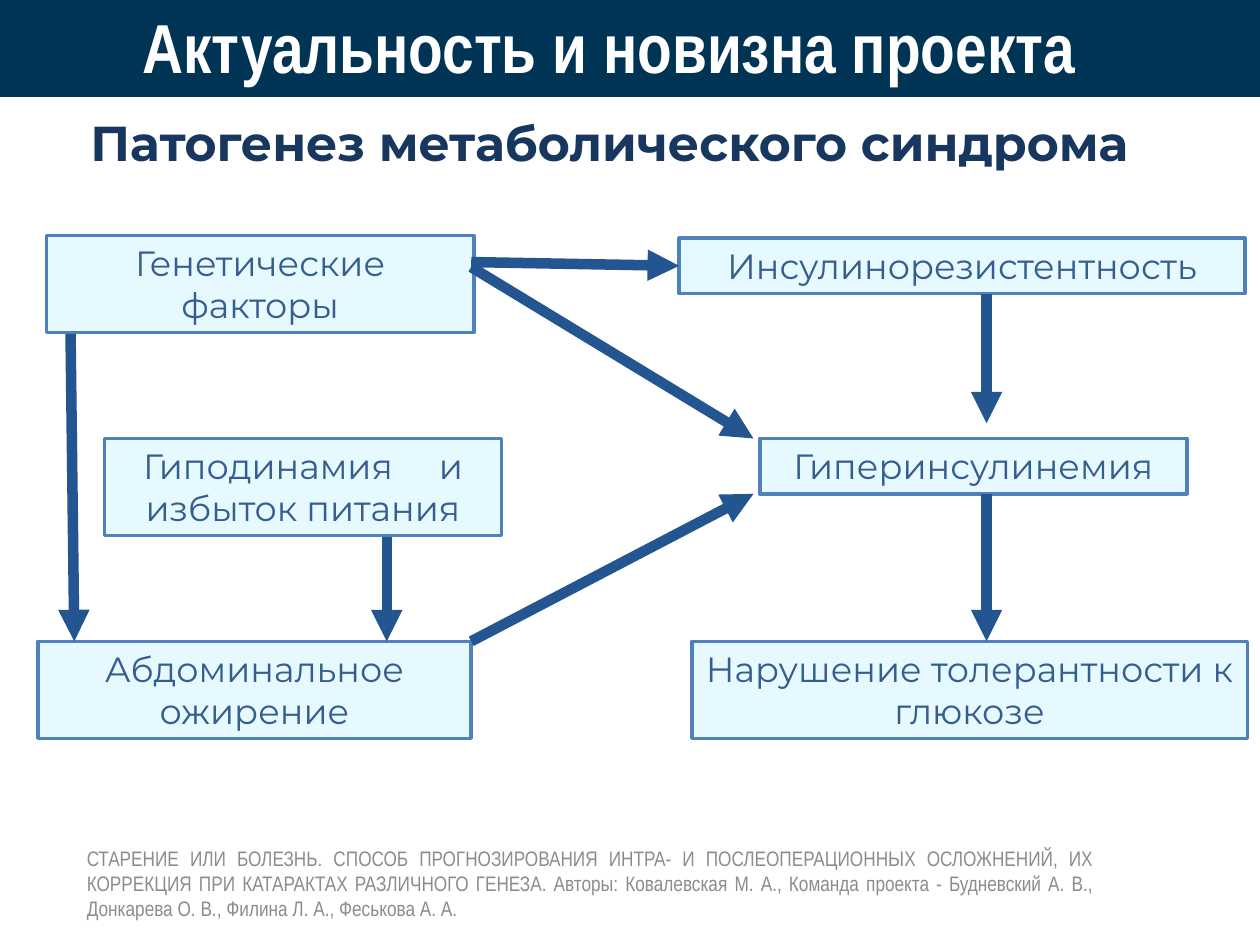
from lxml import etree
from pptx import Presentation
from pptx.dml.color import RGBColor
from pptx.enum.shapes import MSO_CONNECTOR, MSO_SHAPE
from pptx.enum.text import MSO_ANCHOR, MSO_AUTO_SIZE, PP_ALIGN
from pptx.oxml.ns import qn
from pptx.util import Inches, Pt

RECTANGLE = MSO_SHAPE.RECTANGLE
STRAIGHT = MSO_CONNECTOR.STRAIGHT
TOP, MIDDLE = MSO_ANCHOR.TOP, MSO_ANCHOR.MIDDLE
CENTER, JUSTIFY = PP_ALIGN.CENTER, PP_ALIGN.JUSTIFY
LEFT_SIDE = 1

COLORS = {
    "header": "003455", "title": "FFFFFF", "subtitle": "17375E",
    "box": "E6F9FE", "border": "4F81BD", "box_text": "355E8F",
    "arrow": "235591", "footer": "8C8C8C",
}
HEADING_FONT, BODY_FONT = "Arial Narrow", "Montserrat"
ONE_LINE, TWO_LINES = 0.44, 0.77
WIDE_GAP = 2100  # extra space after a character, in hundredths of a point

# name: (left, top, width, height, words)
FACTORS = {
    "genes": (0.37, 1.87, 3.39, TWO_LINES, ["Генетические факторы"]),
    "resistance": (5.39, 1.89, 4.49, ONE_LINE, ["Инсулинорезистентность"]),
    "lifestyle": (0.83, 3.48, 3.15, TWO_LINES,
                  ["Гиподинамия", " ", "и избыток питания"]),
    "obesity": (0.3, 5.09, 3.44, TWO_LINES, ["Абдоминальное ожирение"]),
    "insulin": (6.03, 3.48, 3.39, ONE_LINE, ["Гиперинсулинемия"]),
    "tolerance": (5.49, 5.09, 4.41, TWO_LINES,
                  ["Нарушение толерантности к глюкозе"]),
}
ARROWS = [
    ((3.74, 2.12), (5.98, 3.48)),
    ((0.56, 2.65), (0.59, 5.09)),
    ((3.07, 4.26), (3.07, 5.09)),
    ((7.83, 3.92), (7.83, 5.09)),
    ((7.83, 2.33), (7.83, 3.36)),
    ((3.74, 5.09), (5.98, 3.92)),
]
FOOTER = (
    "СТАРЕНИЕ ИЛИ БОЛЕЗНЬ. СПОСОБ ПРОГНОЗИРОВАНИЯ ИНТРА- И ПОСЛЕОПЕРАЦИОННЫХ "
    "ОСЛОЖНЕНИЙ, ИХ КОРРЕКЦИЯ ПРИ КАТАРАКТАХ РАЗЛИЧНОГО ГЕНЕЗА. Авторы: "
    "Ковалевская М. А., Команда проекта - Будневский А. В., Донкарева О. В., "
    "Филина Л. А., Феськова А. А."
)


def color(name):
    return RGBColor.from_string(COLORS[name])


def write(shape, words, size, font, color_name, bold=False, align=CENTER, anchor=TOP):
    """Fill a shape with one paragraph; a lone space becomes a wide gap."""
    frame = shape.text_frame
    frame.word_wrap = True
    frame.auto_size = MSO_AUTO_SIZE.NONE
    frame.vertical_anchor = anchor
    para = frame.paragraphs[0]
    para.alignment = align
    for word in words:
        span = para.add_run()
        span.text = word
        span.font.size = Pt(size)
        span.font.name = font
        span.font.bold = bold
        span.font.color.rgb = color(color_name)
        if word == " ":
            span.font._element.set("spc", str(WIDE_GAP))


def add_rectangle(page, left, top, width, height, fill, border):
    box = page.shapes.add_shape(
        RECTANGLE, Inches(left), Inches(top), Inches(width), Inches(height))
    box.shadow.inherit = False
    box.fill.solid()
    box.fill.fore_color.rgb = color(fill)
    box.line.color.rgb = color(border)
    box.line.width = Pt(2)
    return box


def add_header(page):
    band = add_rectangle(page, 0, 0, 10, 0.76, "header", "header")
    title = page.shapes.title
    title._element.addprevious(band._element)
    title.left, title.top = Inches(0.2), Inches(0.05)
    title.width, title.height = Inches(9.27), Inches(0.63)
    write(title, ["Актуальность и новизна проекта"], 39.6, HEADING_FONT,
          "title", bold=True, anchor=MIDDLE)


def add_text(page, left, top, width, height, text, size, font, color_name, **style):
    box = page.shapes.add_textbox(
        Inches(left), Inches(top), Inches(width), Inches(height))
    write(box, [text], size, font, color_name, **style)
    return box


def add_factor(page, left, top, width, height, words):
    box = add_rectangle(page, left, top, width, height, "box", "border")
    write(box, words, 20, BODY_FONT, "box_text")
    box.text_frame.auto_size = MSO_AUTO_SIZE.SHAPE_TO_FIT_TEXT
    return box


def add_arrow(page, start, end):
    arrow = page.shapes.add_connector(
        STRAIGHT, *(Inches(value) for value in (*start, *end)))
    arrow.line.color.rgb = color("arrow")
    arrow.line.width = Pt(6)
    etree.SubElement(arrow.line._get_or_add_ln(), qn("a:tailEnd"), type="triangle")
    etree.SubElement(arrow._element.spPr, qn("a:effectLst"))
    return arrow


def main():
    deck = Presentation()
    deck.slide_width, deck.slide_height = Inches(10), Inches(7.5)
    page = deck.slides.add_slide(deck.slide_layouts[5])

    add_header(page)
    add_text(page, 0.28, 0.84, 9.22, 5.86, "Патогенез метаболического синдрома ",
             28, BODY_FONT, "subtitle", bold=True)
    boxes = {name: add_factor(page, *factor) for name, factor in FACTORS.items()}
    for start, end in ARROWS:
        add_arrow(page, start, end)
    to_resistance = add_arrow(page, (3.74, 2.08), (5.39, 2.11))
    to_resistance.end_connect(boxes["resistance"], LEFT_SIDE)

    footer = add_text(page, 0.59, 6.9, 8.19, 0.4, FOOTER, 12, HEADING_FONT,
                      "footer", align=JUSTIFY, anchor=MIDDLE)
    footer.text_frame.margin_bottom = Inches(0.23)
    deck.save("out.pptx")


if __name__ == "__main__":
    main()
